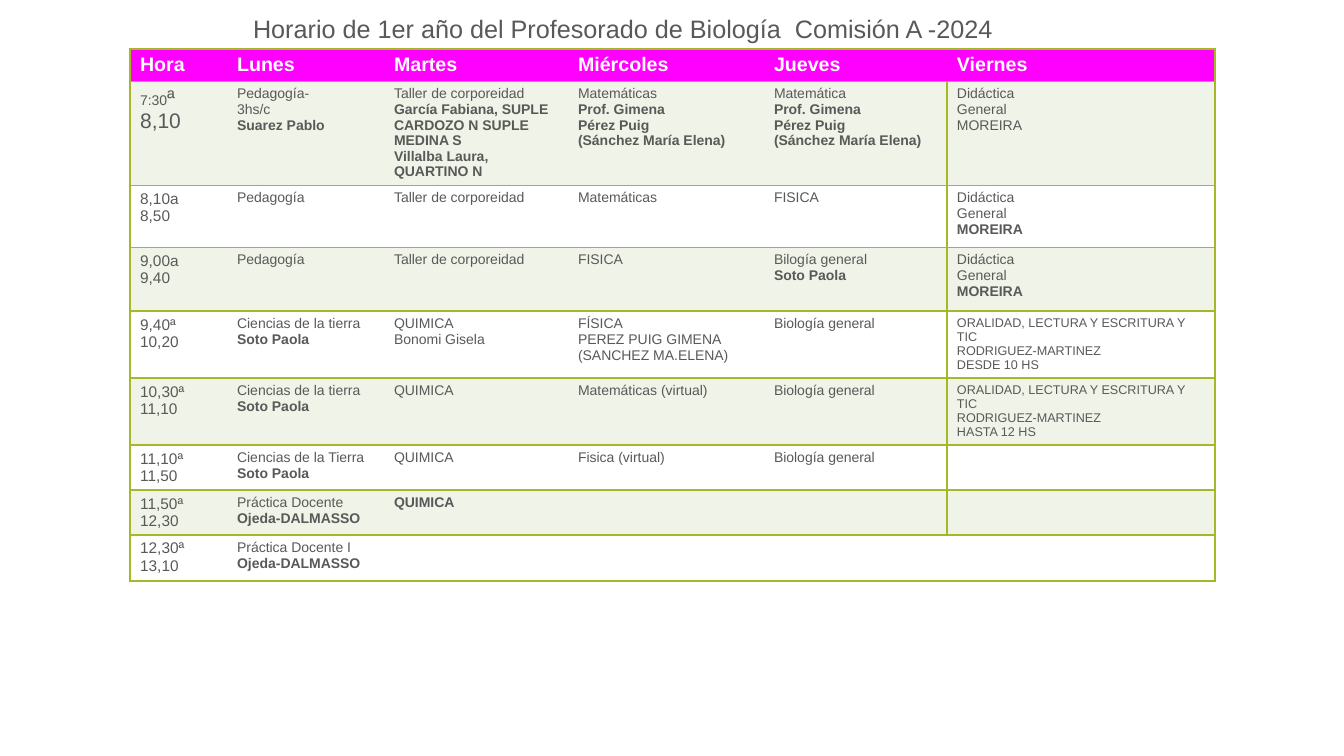
import pptx
import pptx.dml.color
import pptx.enum.text
import pptx.oxml
import pptx.oxml.ns
import pptx.util

EMU_PER_PX = 914400 / 100.8
FONT = "Arial"
GRAY = "595959"
WHITE = "FFFFFF"
GREEN = "A6B727"
MAGENTA = "FF00FF"
BAND = "F0F3E7"

COLUMN_WIDTHS = [97, 157, 184, 196, 183, 268]
ROW_HEIGHTS = [32, 104, 62, 64, 67, 67, 45, 45, 46]
HOUR, THURSDAY, FRIDAY = 0, 4, 5
BOLD = "*"

TITLE = "Horario de 1er año del Profesorado de Biología  Comisión A -2024"
DAYS = ["Hora", "Lunes", "Martes", "Miércoles", "Jueves", "Viernes"]
FIRST_HOUR = [[("7:30", 10), ("ª", 15)], [("8,10", 15)]]
PROFESSOR = "*Prof. Gimena\n*Pérez Puig\n*(Sánchez María Elena)"
DIDACTICS = "Didáctica\nGeneral\n*MOREIRA"
ORALITY = "ORALIDAD, LECTURA Y ESCRITURA Y TIC\nRODRIGUEZ-MARTINEZ\n"
SCHEDULE = [
    [FIRST_HOUR, "Pedagogía-\n3hs/c\n*Suarez Pablo",
     "Taller de corporeidad\n*García Fabiana, SUPLE CARDOZO N SUPLE MEDINA S\n"
     "*Villalba Laura,\n*QUARTINO N",
     "Matemáticas\n" + PROFESSOR, "Matemática\n" + PROFESSOR,
     "Didáctica\nGeneral\nMOREIRA"],
    ["8,10a\n8,50", "Pedagogía", "Taller de corporeidad", "Matemáticas",
     "FISICA", DIDACTICS],
    ["9,00a\n9,40", "Pedagogía", "Taller de corporeidad", "FISICA",
     "Bilogía general\n*Soto Paola", DIDACTICS],
    ["9,40ª\n10,20", "Ciencias de la tierra\n*Soto Paola",
     "QUIMICA\nBonomi Gisela",
     "FÍSICA\nPEREZ PUIG GIMENA\n(SANCHEZ MA.ELENA)",
     "Biología general", ORALITY + "DESDE 10 HS"],
    ["10,30ª\n11,10", "Ciencias de la tierra\n*Soto Paola", "QUIMICA",
     "Matemáticas (virtual)", "Biología general", ORALITY + "HASTA 12 HS"],
    ["11,10ª\n11,50", "Ciencias de la Tierra\n*Soto Paola", "QUIMICA",
     "Fisica (virtual)", "Biología general", ""],
    ["11,50ª\n12,30", "Práctica Docente\n*Ojeda-DALMASSO", "*QUIMICA", "", "", ""],
    ["12,30ª\n13,10", "Práctica Docente I\n*Ojeda-DALMASSO", "", "", "", ""],
]


def px(length):
    return pptx.util.Emu(round(length * EMU_PER_PX))


def color(value):
    return pptx.dml.color.RGBColor.from_string(value)


def add_run(paragraph, text, size, ink, bold=False):
    run = paragraph.add_run()
    run.text = text
    run.font.name = FONT
    run.font.size = pptx.util.Pt(size)
    run.font.bold = bold
    run.font.color.rgb = color(ink)


def write_cell(cell, content, size, ink, bold=False):
    if isinstance(content, str):
        content = [[(line, size)] for line in content.split("\n") if line]
    for index, runs in enumerate(content):
        frame = cell.text_frame
        paragraph = frame.add_paragraph() if index else frame.paragraphs[0]
        for text, run_size in runs:
            strong = bold or text.startswith(BOLD)
            add_run(paragraph, text.removeprefix(BOLD), run_size, ink, strong)


def set_borders(cell, sides):
    properties = cell._tc.get_or_add_tcPr()
    namespace = pptx.oxml.ns.nsdecls("a")
    for index, side in enumerate("LRTB"):
        paint = "<a:noFill/>"
        if side in sides:
            paint = f'<a:solidFill><a:srgbClr val="{GREEN}"/></a:solidFill>'
        line = f'<a:ln{side} {namespace} w="12700">{paint}</a:ln{side}>'
        properties.insert(index, pptx.oxml.parse_xml(line))


def border_sides(row, column):
    sides = "TB"
    inner = 0 < row < len(SCHEDULE)
    if column == HOUR or (column == FRIDAY and inner):
        sides += "L"
    if column == FRIDAY or (column == THURSDAY and inner):
        sides += "R"
    return sides


def text_size(column, content):
    if column == HOUR:
        return 11
    return 9 if content.startswith(ORALITY) else 10


def add_title(slide, left, top, width, height):
    title = slide.shapes.title
    title.left, title.top, title.width, title.height = map(px, (left, top, width, height))
    frame = title.text_frame
    frame.word_wrap = True
    frame.auto_size = pptx.enum.text.MSO_AUTO_SIZE.NONE
    frame.vertical_anchor = pptx.enum.text.MSO_ANCHOR.BOTTOM
    paragraph = frame.paragraphs[0]
    paragraph.alignment = pptx.enum.text.PP_ALIGN.LEFT
    paragraph.line_spacing = 0.9
    add_run(paragraph, TITLE, 18, GRAY)


def add_schedule(slide, left, top):
    rows = [DAYS] + SCHEDULE
    shape = slide.shapes.add_table(
        len(rows), len(DAYS), px(left), px(top),
        px(sum(COLUMN_WIDTHS)), px(sum(ROW_HEIGHTS)))
    table = shape.table
    table.horz_banding = False
    for column, width in zip(table.columns, COLUMN_WIDTHS):
        column.width = px(width)
    for row, height in zip(table.rows, ROW_HEIGHTS):
        row.height = px(height)
    for row, contents in enumerate(rows):
        for column, content in enumerate(contents):
            cell = table.cell(row, column)
            cell.fill.solid()
            if row == 0:
                cell.fill.fore_color.rgb = color(MAGENTA)
                write_cell(cell, content, 14, WHITE, True)
            else:
                cell.fill.fore_color.rgb = color(BAND if row % 2 else WHITE)
                write_cell(cell, content, text_size(column, content), GRAY)
            set_borders(cell, border_sides(row, column))


def main():
    presentation = pptx.Presentation()
    presentation.slide_width = px(1344)
    presentation.slide_height = px(756)
    slide = presentation.slides.add_slide(presentation.slide_layouts[5])
    add_title(slide, 243, 0, 1033, 49)
    add_schedule(slide, 130, 49)
    presentation.save("out.pptx")


if __name__ == "__main__":
    main()
